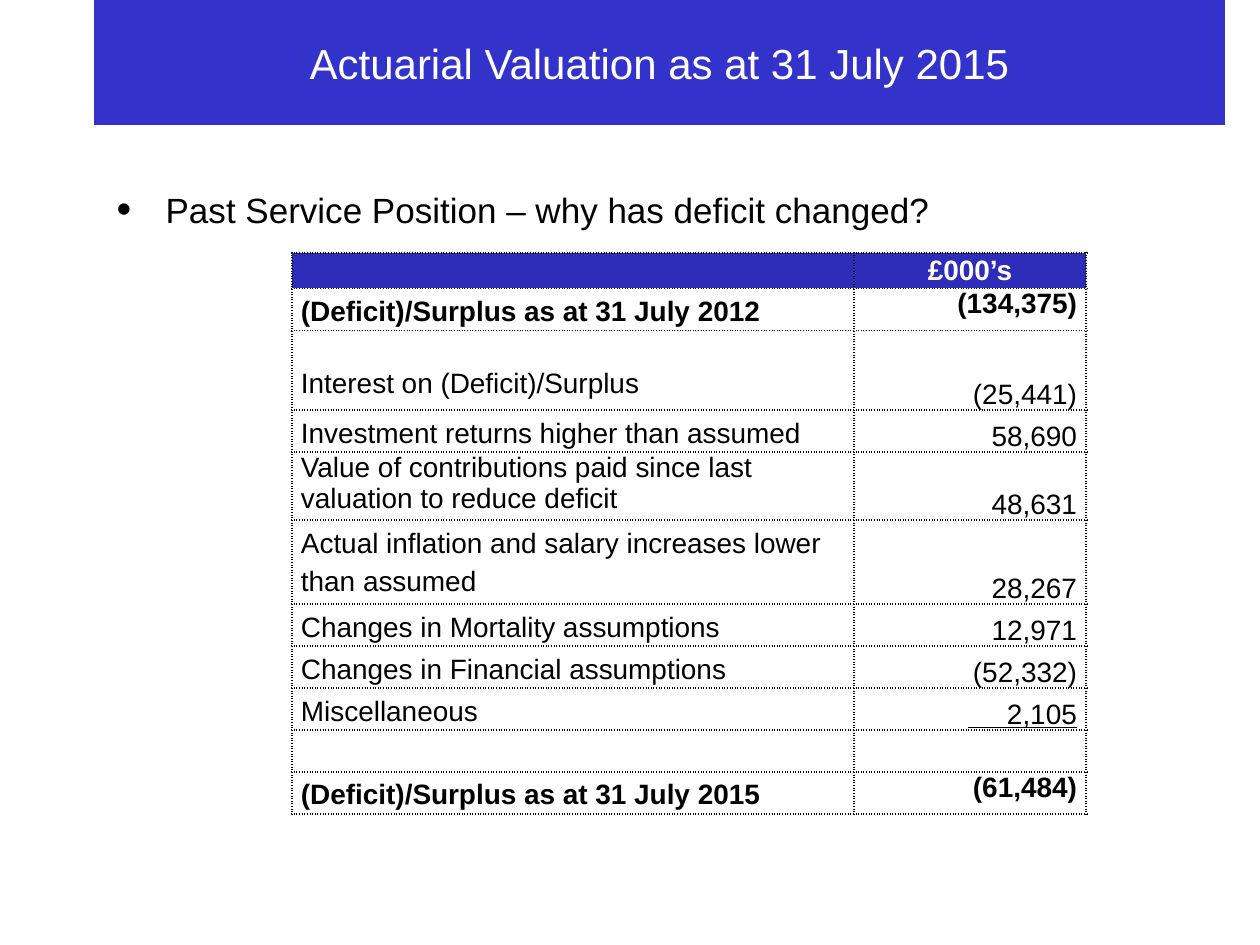
from dataclasses import dataclass

from lxml import etree
from pptx import Presentation
from pptx.dml.color import RGBColor
from pptx.enum.text import MSO_ANCHOR, MSO_AUTO_SIZE, PP_ALIGN
from pptx.oxml.ns import qn
from pptx.util import Emu, Pt

TOP, MIDDLE, BOTTOM = MSO_ANCHOR.TOP, MSO_ANCHOR.MIDDLE, MSO_ANCHOR.BOTTOM
LEFT, CENTER, RIGHT = PP_ALIGN.LEFT, PP_ALIGN.CENTER, PP_ALIGN.RIGHT
PX_PER_INCH = 126
BLACK, WHITE, BLUE, HEADER_BLUE = "000000", "FFFFFF", "3333CC", "2D2DB9"


@dataclass
class ValuationRow:
    label: str
    amount: str
    height: int = 42
    bold: bool = False
    underline: bool = False
    line_spacing: float = 1.25
    label_top: int = 0


ROWS = [
    ValuationRow("(Deficit)/Surplus as at 31 July 2012", "(134,375)", bold=True),
    ValuationRow("Interest on (Deficit)/Surplus", "(25,441)", height=80, label_top=30),
    ValuationRow("Investment returns higher than assumed", "58,690"),
    ValuationRow("Value of contributions paid since last valuation to reduce deficit",
                 "48,631", height=68, line_spacing=1.0),
    ValuationRow("Actual inflation and salary increases lower than assumed",
                 "28,267", height=84),
    ValuationRow("Changes in Mortality assumptions", "12,971"),
    ValuationRow("Changes in Financial assumptions", "(52,332)"),
    ValuationRow("Miscellaneous", "     2,105", underline=True),
    ValuationRow("", ""),
    ValuationRow("(Deficit)/Surplus as at 31 July 2015", "(61,484)", bold=True),
]
HEADER_HEIGHT = 34
COLUMN_WIDTHS = (562, 232)


def px(length: int) -> Emu:
    return Emu(round(length * 914400 / PX_PER_INCH))


def color(value: str) -> RGBColor:
    return RGBColor.from_string(value)


def write_text(frame, text: str, *, size: int = 16, fill: str = BLACK,
               bold: bool = False, underline: bool = False,
               align=LEFT, line_spacing: float = 1.0):
    """Write one formatted paragraph and return it."""
    paragraph = frame.paragraphs[0]
    paragraph.alignment = align
    paragraph.line_spacing = line_spacing
    paragraph.space_before = Pt(0)
    run = paragraph.add_run()
    run.text = text
    run.font.name = "Arial"
    run.font.size = Pt(size)
    run.font.bold = bold
    run.font.underline = underline
    run.font.color.rgb = color(fill)
    return paragraph


def place(shape, left: int, top: int, width: int, height: int) -> None:
    shape.left, shape.top = px(left), px(top)
    shape.width, shape.height = px(width), px(height)
    shape.text_frame.auto_size = MSO_AUTO_SIZE.NONE


def add_bullet(paragraph, indent: int, size_percent: int) -> None:
    properties = paragraph._p.get_or_add_pPr()
    properties.set("marL", str(px(indent)))
    properties.set("indent", str(-px(indent)))
    etree.SubElement(properties, qn("a:buSzPct"), val=str(size_percent * 1000))
    etree.SubElement(properties, qn("a:buFont"), typeface="Arial")
    etree.SubElement(properties, qn("a:buChar"), char="•")


def add_dotted_borders(cell) -> None:
    properties = cell._tc.get_or_add_tcPr()
    for index, side in enumerate(("lnL", "lnR", "lnT", "lnB")):
        line = etree.Element(qn(f"a:{side}"), w=str(Pt(1)))
        solid = etree.SubElement(line, qn("a:solidFill"))
        etree.SubElement(solid, qn("a:srgbClr"), val=BLACK)
        etree.SubElement(line, qn("a:prstDash"), val="sysDot")
        properties.insert(index, line)


def fill_cell(cell, text: str, *, fill: str = "", anchor=TOP,
              margin_top: int = 0, **text_format) -> None:
    cell.margin_left = cell.margin_right = px(9)
    cell.margin_top, cell.margin_bottom = px(margin_top), 0
    cell.vertical_anchor = anchor
    if fill:
        cell.fill.solid()
        cell.fill.fore_color.rgb = color(fill)
    else:
        cell.fill.background()
    write_text(cell.text_frame, text, **text_format)
    add_dotted_borders(cell)


def add_valuation_table(slide, left: int, top: int) -> None:
    heights = [HEADER_HEIGHT] + [row.height for row in ROWS]
    table = slide.shapes.add_table(
        len(heights), len(COLUMN_WIDTHS), px(left), px(top),
        px(sum(COLUMN_WIDTHS)), px(sum(heights))).table
    table.horz_banding = False
    for column, width in zip(table.columns, COLUMN_WIDTHS):
        column.width = px(width)
    for table_row, height in zip(table.rows, heights):
        table_row.height = px(height)

    for index, heading in enumerate(("", "£000’s")):
        fill_cell(table.cell(0, index), heading, fill=HEADER_BLUE,
                  anchor=MIDDLE, bold=True, align=CENTER, **{"size": 16})
        for run in table.cell(0, index).text_frame.paragraphs[0].runs:
            run.font.color.rgb = color(WHITE)
    for index, row in enumerate(ROWS, start=1):
        fill_cell(table.cell(index, 0), row.label, bold=row.bold,
                  line_spacing=row.line_spacing, margin_top=row.label_top)
        fill_cell(table.cell(index, 1), row.amount, bold=row.bold,
                  underline=row.underline, align=RIGHT,
                  anchor=TOP if row.bold else BOTTOM)


def main() -> None:
    presentation = Presentation()
    presentation.slide_width, presentation.slide_height = px(1260), px(945)
    slide = presentation.slides.add_slide(presentation.slide_layouts[1])
    title, body = slide.placeholders

    # Title band
    place(title, 94, 0, 1131, 125)
    title.fill.solid()
    title.fill.fore_color.rgb = color(BLUE)
    title.text_frame.vertical_anchor = MIDDLE
    write_text(title.text_frame, "Actuarial Valuation as at 31 July 2015",
               size=24, fill=WHITE, align=CENTER)

    # Bulleted question
    place(body, 104, 182, 1022, 64)
    question = write_text(body.text_frame,
                          "Past Service Position – why has deficit changed?", size=20)
    add_bullet(question, indent=49, size_percent=120)

    # Reconciliation of the deficit
    add_valuation_table(slide, 292, 253)
    presentation.save("out.pptx")


if __name__ == "__main__":
    main()
